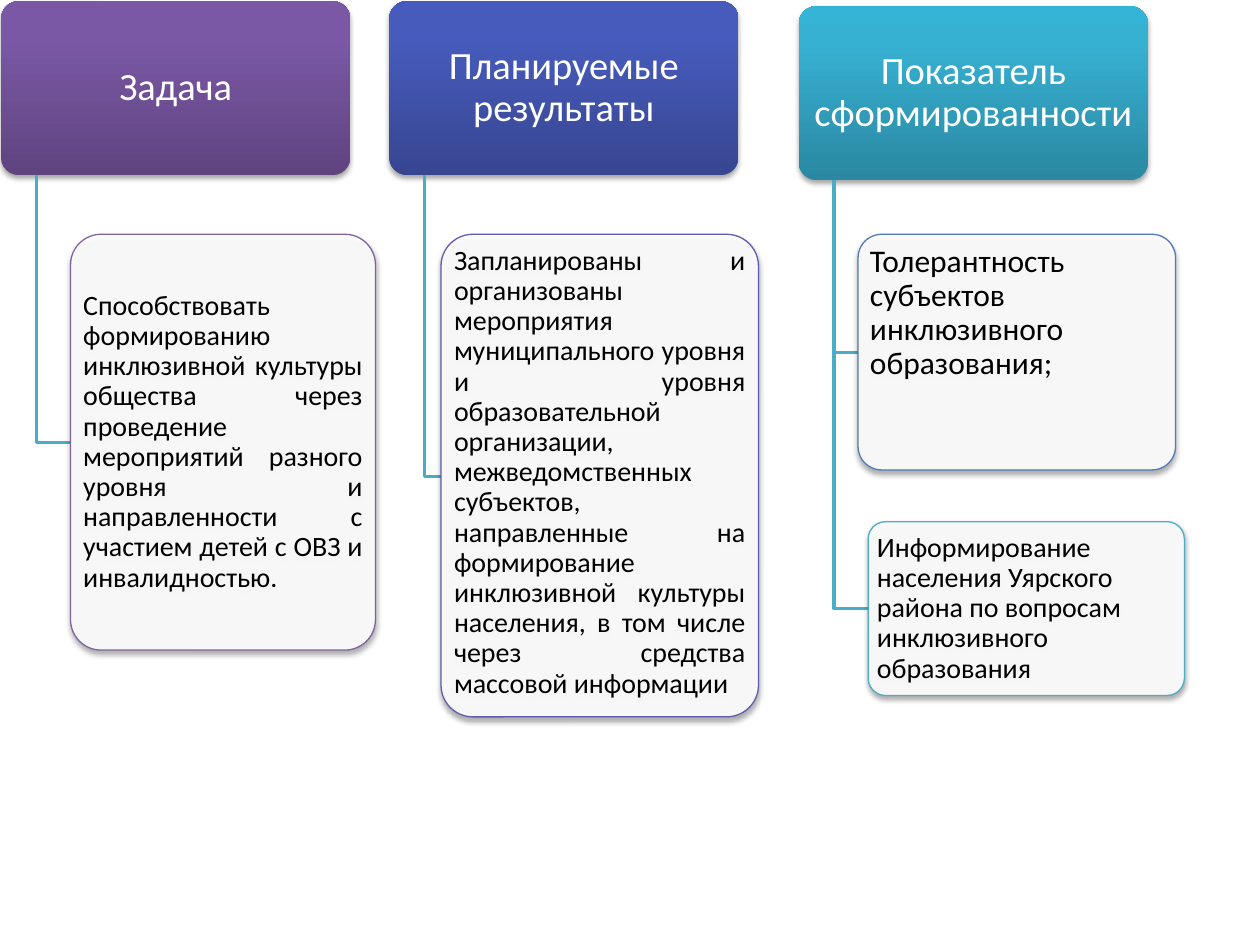
from dataclasses import dataclass

from lxml.etree import SubElement
from pptx import Presentation
from pptx.dml.color import RGBColor
from pptx.enum.shapes import MSO_SHAPE as Preset
from pptx.enum.text import MSO_ANCHOR as Anchor, PP_ALIGN as Align
from pptx.oxml.ns import qn
from pptx.util import Pt

PX = 9144  # EMU in one px, 100 px to the inch
HEADER_WIDTH, HEADER_HEIGHT = 277, 138
STEM_OFFSET = 28
STEM_COLOR = "4BACC6"


@dataclass(frozen=True)
class Card:
    text: str
    left: int
    top: int
    width: int
    height: int
    outline: str
    size: int = 16
    align: Align = Align.JUSTIFY
    anchor: Anchor = Anchor.MIDDLE
    inset: tuple[int, int] = (3, 2)


@dataclass(frozen=True)
class Column:
    title: str
    left: int
    top: int
    gradient: tuple[str, str, str]
    cards: tuple[Card, ...]


COLUMNS = (
    Column("Задача", 1, 1, ("5F4480", "7B58A6", "7C57A8"), (
        Card("Способствовать формированию инклюзивной культуры общества через "
             "проведение мероприятий разного уровня и направленности с участием "
             "детей с ОВЗ и инвалидностью.", 56, 186, 242, 330, "8064A2"),
    )),
    Column("Планируемые результаты", 309, 1, ("374691", "475BBC", "455ABF"), (
        Card("Запланированы и организованы мероприятия муниципального уровня и "
             "уровня образовательной организации, межведомственных субъектов, "
             "направленные на формирование инклюзивной культуры населения, в том "
             "числе через средства массовой информации",
             350, 186, 252, 383, "5F5BAE", anchor=Anchor.TOP),
    )),
    Column("Показатель сформированности", 634, 5, ("2A88A2", "37B1D2", "34B4D6"), (
        Card("Толерантность субъектов инклюзивного образования;",
             681, 186, 252, 187, "537ABA", size=18, anchor=Anchor.TOP, inset=(4, 3)),
        Card("Информирование населения Уярского района по вопросам инклюзивного "
             "образования", 689, 414, 251, 138, "4BACC6", align=Align.LEFT),
    )),
)


def rgb(color: str) -> RGBColor:
    return RGBColor.from_string(color)


def add_color(parent, color: str, alpha: int | None = None) -> None:
    node = SubElement(parent, qn("a:srgbClr"), val=color)
    if alpha is not None:
        SubElement(node, qn("a:alpha"), val=str(alpha * 1000))


def add_soft_shadow(shape) -> None:
    shape.shadow.inherit = False
    effects = shape._element.spPr.find(qn("a:effectLst"))
    shadow = SubElement(effects, qn("a:outerShdw"), blurRad=str(Pt(3.1)),
                        dist=str(Pt(1.8)), dir="5400000", rotWithShape="0")
    add_color(shadow, "000000", 35)


def add_rounded_box(slide, left: int, top: int, width: int, height: int):
    box = slide.shapes.add_shape(Preset.ROUNDED_RECTANGLE, left * PX, top * PX,
                                 width * PX, height * PX)
    box.adjustments[0] = 0.1
    add_soft_shadow(box)
    return box


def write_text(shape, text: str, *, size: int, color: str, align: Align,
               anchor: Anchor, inset: tuple[int, int]) -> None:
    frame = shape.text_frame
    frame.word_wrap = True
    frame.vertical_anchor = anchor
    frame.margin_left = frame.margin_right = inset[0] * PX
    frame.margin_top = frame.margin_bottom = inset[1] * PX
    paragraph = frame.paragraphs[0]
    paragraph.alignment = align
    paragraph.line_spacing = 0.9
    run = paragraph.add_run()
    run.text = text
    run.font.name = "Calibri"
    run.font.size = Pt(size)
    run.font.color.rgb = rgb(color)


def fill_gradient(shape, colors: tuple[str, str, str]) -> None:
    """Fill from the bottom edge to the top one, with stops at 0, 80 and 100 %."""
    shape.fill.gradient()
    shape.fill.gradient_angle = 90
    stops = shape._element.spPr.find(".//" + qn("a:gsLst"))
    for stop in list(stops):
        stops.remove(stop)
    for position, color in zip((0, 80, 100), colors):
        add_color(SubElement(stops, qn("a:gs"), pos=str(position * 1000)), color)


def draw_header(slide, column: Column) -> None:
    header = add_rounded_box(slide, column.left, column.top, HEADER_WIDTH, HEADER_HEIGHT)
    fill_gradient(header, column.gradient)
    header.line.fill.background()
    write_text(header, column.title, size=22, color="FFFFFF", align=Align.CENTER,
               anchor=Anchor.MIDDLE, inset=(5, 3))


def draw_stem(slide, column: Column, card: Card) -> None:
    """Draw the elbow from under the header to the middle of the card's left side."""
    x = column.left + STEM_OFFSET
    middle = card.top + card.height / 2
    builder = slide.shapes.build_freeform(x, column.top + HEADER_HEIGHT, scale=PX)
    builder.add_line_segments([(x, middle), (card.left, middle)], close=False)
    stem = builder.convert_to_shape()
    stem.shadow.inherit = False
    stem.fill.background()
    stem.line.color.rgb = rgb(STEM_COLOR)
    stem.line.width = Pt(2)


def draw_card(slide, card: Card) -> None:
    box = add_rounded_box(slide, card.left, card.top, card.width, card.height)
    box.fill.solid()
    box.fill.fore_color.rgb = rgb("FFFFFF")
    white = box._element.spPr.find(qn("a:solidFill")).find(qn("a:srgbClr"))
    SubElement(white, qn("a:alpha"), val="90000")
    box.line.color.rgb = rgb(card.outline)
    box.line.width = Pt(0.75)
    write_text(box, card.text, size=card.size, color="000000", align=card.align,
               anchor=card.anchor, inset=card.inset)


def main() -> None:
    deck = Presentation()
    deck.slide_width, deck.slide_height = 1000 * PX, 750 * PX
    slide = deck.slides.add_slide(deck.slide_layouts[6])
    for column in COLUMNS:
        draw_header(slide, column)
        for card in column.cards:
            draw_stem(slide, column, card)
            draw_card(slide, card)
    deck.save("out.pptx")


if __name__ == "__main__":
    main()
